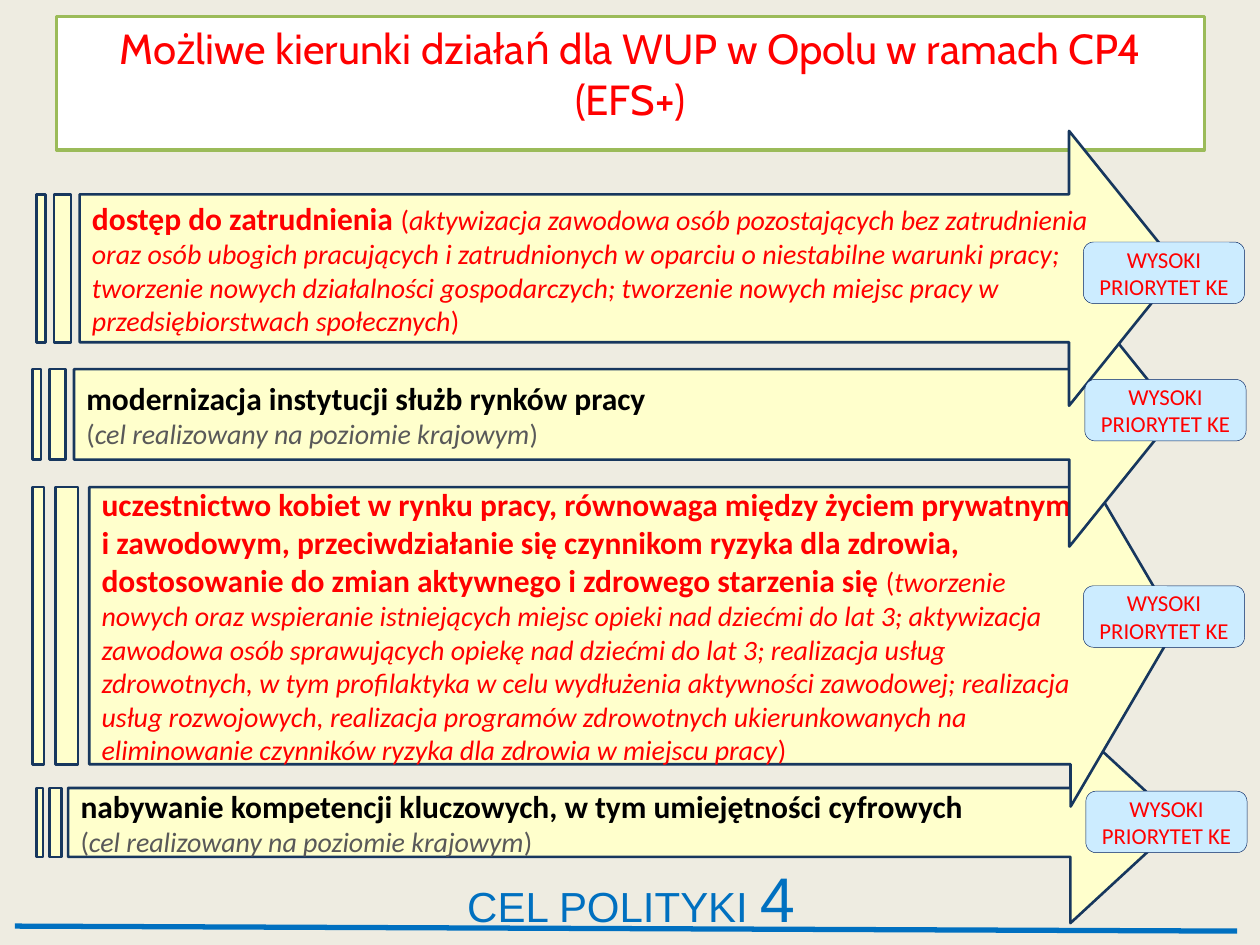
from pptx import Presentation
from pptx.dml.color import RGBColor
from pptx.enum.shapes import MSO_CONNECTOR, MSO_SHAPE
from pptx.enum.text import MSO_ANCHOR as Anchor, MSO_AUTO_SIZE as AutoSize, PP_ALIGN as Align
from pptx.oxml.ns import qn
from pptx.util import Cm, Pt
from lxml.etree import SubElement

BEIGE = RGBColor(0xEE, 0xEC, 0xE1)
WHITE = RGBColor(0xFF, 0xFF, 0xFF)
BLACK = RGBColor(0x00, 0x00, 0x00)
GREY = RGBColor(0x59, 0x59, 0x59)
RED = RGBColor(0xFF, 0x00, 0x00)
GREEN = RGBColor(0x9B, 0xBB, 0x59)
BLUE = RGBColor(0x00, 0x70, 0xC0)
NAVY = RGBColor(0x17, 0x37, 0x5E)
DARK_BLUE = RGBColor(0x00, 0x20, 0x60)
LIGHT_BLUE = RGBColor(0xCC, 0xEC, 0xFF)
CREAM = RGBColor(0xFF, 0xFF, 0xCC)

NATIONAL = "cel realizowany na poziomie krajowym"
BADGE_SIZE = (3.25, 1.24)

# box, (shaft, head) adjustments, badge corner, heading, detail, regional goal?
GOALS = [
    ((0.74, 2.64, 23.04, 5.54), (0.538, 0.402), (21.84, 4.88),
     "dostęp do zatrudnienia ",
     "aktywizacja zawodowa osób pozostających bez zatrudnienia oraz osób ubogich "
     "pracujących i zatrudnionych w oparciu o niestabilne warunki pracy; tworzenie "
     "nowych działalności gospodarczych; tworzenie nowych miejsc pracy w "
     "przedsiębiorstwach społecznych", True),
    ((0.66, 5.69, 23.04, 5.33), (0.342, 0.402), (21.87, 7.65),
     "modernizacja instytucji służb rynków pracy", NATIONAL, False),
    ((0.66, 8.97, 23.06, 7.29), (0.766, 0.293), (21.84, 11.81),
     "uczestnictwo kobiet w rynku pracy, równowaga między życiem prywatnym i "
     "zawodowym, przeciwdziałanie się czynnikom ryzyka dla zdrowia, dostosowanie "
     "do zmian aktywnego i zdrowego starzenia się ",
     "tworzenie nowych oraz wspieranie istniejących miejsc opieki nad dziećmi do "
     "lat 3; aktywizacja zawodowa osób sprawujących opiekę nad dziećmi do lat 3; "
     "realizacja usług zdrowotnych, w tym profilaktyka w celu wydłużenia aktywności "
     "zawodowej; realizacja usług rozwojowych, realizacja programów zdrowotnych "
     "ukierunkowanych na eliminowanie czynników ryzyka dla zdrowia w miejscu pracy",
     True),
    ((0.74, 14.55, 23.04, 4.06), (0.342, 0.542), (21.89, 15.95),
     "nabywanie kompetencji kluczowych, w tym umiejętności cyfrowych",
     NATIONAL, False),
]


def paint(s, fill, line, width):
    s.fill.solid()
    s.fill.fore_color.rgb = fill
    s.line.color.rgb = line
    s.line.width = Pt(width)


def set_font(font, name, size, color):
    font.name = name
    font.size = Pt(size)
    font.color.rgb = color


def add_panel(slide, kind, box, fill, line, width, align):
    """Add a filled preset shape and return it with its first paragraph."""
    s = slide.shapes.add_shape(kind, *map(Cm, box))
    s.shadow.inherit = False
    paint(s, fill, line, width)
    tf = s.text_frame
    tf.word_wrap = True
    tf.vertical_anchor = Anchor.MIDDLE
    p = tf.paragraphs[0]
    p.alignment = align
    return s, p


def add_title(slide, box):
    title = slide.shapes.title
    title.left, title.top, title.width, title.height = map(Cm, box)
    paint(title, WHITE, GREEN, 2)
    tf = title.text_frame
    tf.text = "Możliwe kierunki działań dla WUP w Opolu w ramach CP4 (EFS+)"
    tf.auto_size = AutoSize.NONE
    tf.vertical_anchor = Anchor.TOP
    p = tf.paragraphs[0]
    p.alignment = Align.CENTER
    set_font(p.font, "Cabin", 24, RED)


def add_goal(slide, box, adjustments, heading, detail, regional):
    s, p = add_panel(slide, MSO_SHAPE.STRIPED_RIGHT_ARROW, box, CREAM, NAVY, 1.5, Align.LEFT)
    s.adjustments[0], s.adjustments[1] = adjustments
    r = p.add_run()
    r.text = heading
    r.font.bold = True
    set_font(r.font, "Calibri", 18, RED if regional else BLACK)
    if not regional:
        p.add_line_break()
    for text, italic in (("(", False), (detail, True), (")", False)):
        r = p.add_run()
        r.text = text
        r.font.italic = italic
        set_font(r.font, "Calibri", 16, RED if regional else GREY)


def add_badge(slide, box):
    _, p = add_panel(slide, MSO_SHAPE.ROUNDED_RECTANGLE, box, LIGHT_BLUE, DARK_BLUE, 0.25,
                     Align.CENTER)
    p.text = "WYSOKI PRIORYTET KE"
    set_font(p.font, "Calibri", 13, RED)


def add_footer(slide, box):
    """Place the policy goal label and the rule that runs beneath it."""
    left, top, width, height = box
    rule = slide.shapes.add_connector(MSO_CONNECTOR.STRAIGHT, Cm(left), Cm(top + 1.47),
                                      Cm(left + width), Cm(top + 1.57))
    rule.line.color.rgb = BLUE
    rule.line.width = Pt(3)
    SubElement(rule._element.spPr, qn("a:effectLst"))

    label = slide.shapes.add_textbox(Cm(left + 8.87), Cm(top), Cm(8.51), Cm(height))
    label.text_frame.word_wrap = True
    p = label.text_frame.paragraphs[0]
    for text, size in (("CEL POLITYKI ", 24), ("4", 36)):
        r = p.add_run()
        r.text = text
        set_font(r.font, "Arial", size, BLUE)


def main():
    prs = Presentation()
    prs.slide_width, prs.slide_height = Cm(25.4), Cm(19.05)
    slide = prs.slides.add_slide(prs.slide_layouts[5])
    slide.background.fill.solid()
    slide.background.fill.fore_color.rgb = BEIGE

    add_title(slide, (1.14, 0.33, 23.14, 2.69))
    add_footer(slide, (0.3, 17.2, 24.64, 1.8))
    # Upper arrows overlap lower ones, so the lowest is drawn first.
    for box, adjustments, _, heading, detail, regional in reversed(GOALS):
        add_goal(slide, box, adjustments, heading, detail, regional)
    for _, _, corner, *_ in GOALS:
        add_badge(slide, corner + BADGE_SIZE)

    prs.save("out.pptx")


if __name__ == "__main__":
    main()
